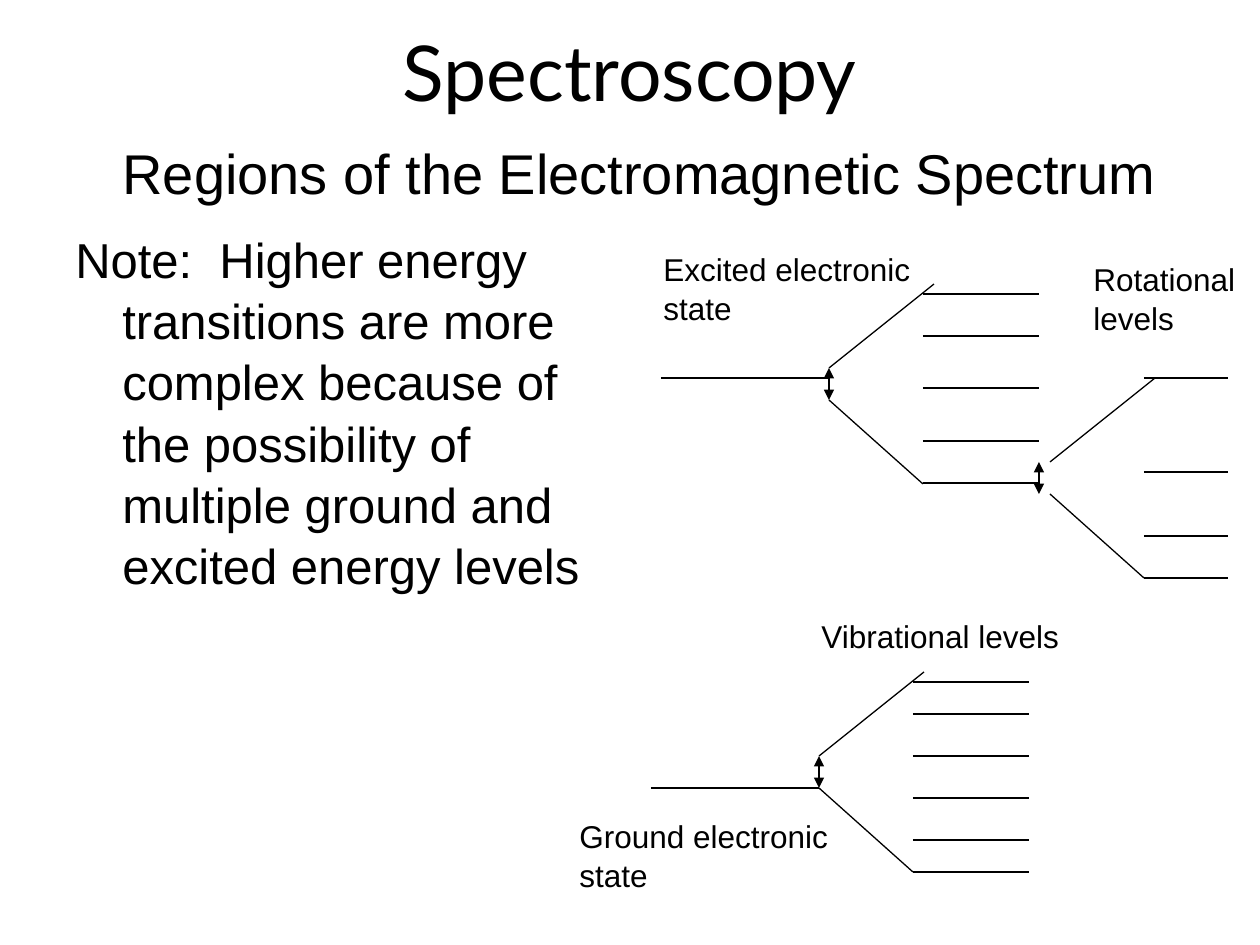
from lxml.etree import SubElement
from pptx import Presentation
from pptx.dml.color import RGBColor
from pptx.enum.shapes import MSO_CONNECTOR as Kind
from pptx.enum.text import MSO_ANCHOR as Anchor, PP_ALIGN as Align
from pptx.oxml.ns import qn
from pptx.util import Pt

PX = 914400 / 126
INK = RGBColor.from_string("000000")

deck = Presentation()
deck.slide_width, deck.slide_height = round(1260 * PX), round(945 * PX)
slide = deck.slides.add_slide(deck.slide_layouts[6])


def line(x1, y1, x2, y2, arrows=False):
    ends = [round(v * PX) for v in (x1, y1, x2, y2)]
    link = slide.shapes.add_connector(Kind.STRAIGHT, *ends)
    link.line.color.rgb = INK
    link.line.width = Pt(0.75)
    if arrows:
        stroke = link.line._get_or_add_ln()
        for end in ("a:headEnd", "a:tailEnd"):
            SubElement(stroke, qn(end), type="triangle")
    SubElement(link._element.spPr, qn("a:effectLst"))


def text(x, y, w, h, words, size):
    box = slide.shapes.add_textbox(*[round(v * PX) for v in (x, y, w, h)])
    box.text_frame.word_wrap = True
    para = box.text_frame.paragraphs[0]
    para.line_spacing = 1.04
    run = para.add_run()
    run.text = words
    run.font.name, run.font.size = "Arial", Pt(size)
    run.font.color.rgb = INK
    return box.text_frame, para


# Title: the second line sits under the first, after a line break
frame, para = text(63, 38, 1134, 158, "Spectroscopy", 44)
frame.vertical_anchor = Anchor.MIDDLE
para.alignment = Align.CENTER
para.line_spacing = 1.0
para.runs[0].font.name = "Lato"
para.add_line_break()
for words, font, size in [
    (" ", "Lato", 44),
    ("Regions of the Electromagnetic Spectrum", "Arial", 32),
]:
    run = para.add_run()
    run.text = words
    run.font.name, run.font.size = font, Pt(size)
    run.font.color.rgb = INK

# Note with a hanging indent
note = ("Note:  Higher energy transitions are more complex because of "
        "the possibility of multiple ground and excited energy levels")
frame, para = text(63, 221, 557, 624, note, 28)
props = para._p.get_or_add_pPr()
hang = round(47 * PX)
props.set("marL", str(hang))
props.set("indent", str(-hang))

# Labels
for x, y, w, h, words in [
    (567, 809, 284, 88, "Ground electronic state"),
    (651, 242, 284, 88, "Excited electronic state"),
    (809, 609, 273, 50, "Vibrational levels"),
    (1081, 252, 179, 88, "Rotational levels"),
]:
    text(x, y, w, h, words, 18)

# Electronic states
for x, y in [(651, 788), (661, 378)]:
    line(x, y, x + 168, y)

# Fans: arrow x, fan x, top y, level width, level heights
GAP, RISE, RUN = 32, 84, 94
for mid, x, y, wide, levels in [
    (819, 819, 756, 116, (682, 714, 756, 798, 840, 872)),
    (829, 829, 368, 116, (294, 336, 388, 441, 483)),
    (1039, 1050, 462, 84, (378, 472, 536, 578)),
]:
    line(mid, y, mid, y + GAP, arrows=True)
    line(x, y, x + 105, y - RISE)
    line(x, y + GAP, x + RUN, y + GAP + RISE)
    for level in levels:
        line(x + RUN, level, x + RUN + wide, level)

deck.save("out.pptx")
